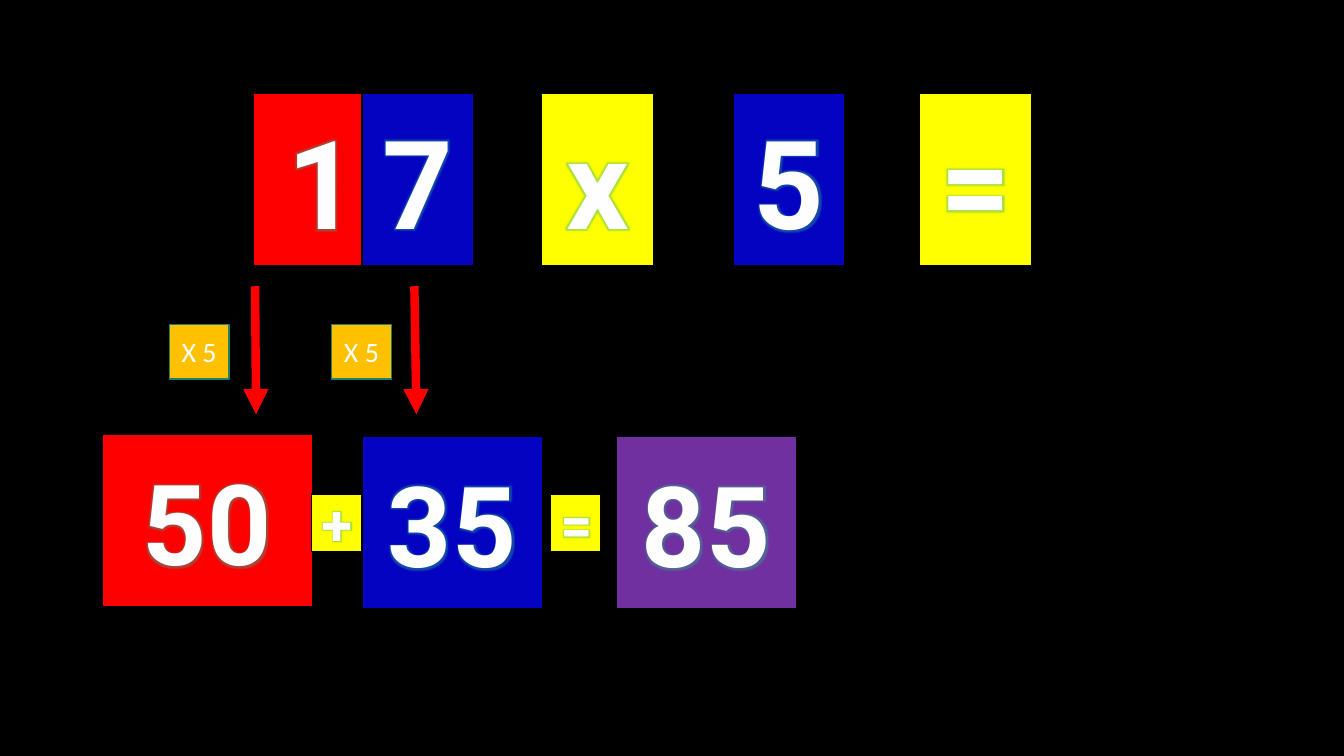
from lxml.etree import SubElement as Sub
from pptx import Presentation
from pptx.dml.color import RGBColor
from pptx.enum.shapes import MSO_CONNECTOR as Link, MSO_SHAPE as Shape
from pptx.enum.text import MSO_ANCHOR as Anchor, PP_ALIGN as Align
from pptx.oxml.ns import qn
from pptx.util import Inches, Pt

BLACK = RGBColor(0, 0, 0)
RED = RGBColor(255, 0, 0)
BLUE = RGBColor(3, 3, 193)
YELLOW = RGBColor(255, 255, 0)
PURPLE = RGBColor(112, 48, 160)
ORANGE = RGBColor(255, 192, 0)
TEAL = RGBColor(30, 129, 104)
GREEN = RGBColor(41, 175, 140)
PALE = RGBColor(254, 254, 254)
WHITE = RGBColor(255, 255, 255)

WIDE, HIGH = 13.33, 7.5
TALL, SLIM = 1.71, 1.11
TOP, LOW, MID = 0.93, 4.33, 4.9
SUM = [
    ("10", 2.51, 2.09, RED),
    ("7", 3.59, SLIM, BLUE),
    ("x", 5.37, SLIM, YELLOW),
    ("5", 7.27, SLIM, BLUE),
    ("=", 9.12, SLIM, YELLOW),
]
PARTS = [
    ("50", 1.01, LOW - 0.02, 2.09, RED),
    ("35", 3.59, LOW, 1.79, BLUE),
    ("85", 6.11, LOW, 1.79, PURPLE),
]
SIGNS = [("+", 3.09), ("=", 5.46)]
STEPS = [("X 5", 1.68, 2.53, 2.54), ("X 5", 3.29, 4.11, 4.13)]


def add_box(slide, text, place, fill, edge, size, font, ink):
    box = slide.shapes.add_shape(Shape.RECTANGLE, *map(Inches, place))
    box.shadow.inherit = False
    box.fill.solid()
    box.fill.fore_color.rgb = fill
    box.line.color.rgb = edge
    box.line.width = Pt(1)
    frame = box.text_frame
    frame.text = text
    frame.word_wrap = True
    frame.vertical_anchor = Anchor.MIDDLE
    para = frame.paragraphs[0]
    para.alignment = Align.CENTER
    run = para.runs[0]
    run.font.size = Pt(size)
    run.font.name = font
    run.font.color.rgb = ink
    return run


def add_card(slide, text, place, fill, size):
    run = add_box(slide, text, place, fill, BLACK, size, "Roboto", PALE)
    run.font.bold = True
    props = run.font._element
    props.set("spc", "50")
    line = Sub(props, qn("a:ln"), w=str(Pt(0.75)))
    solid = Sub(line, qn("a:solidFill"))
    Sub(solid, qn("a:srgbClr"), val=str(GREEN))
    glow = Sub(Sub(props, qn("a:effectLst")), qn("a:glow"), rad=str(Pt(3)))
    tint = Sub(glow, qn("a:srgbClr"), val=str(GREEN))
    Sub(tint, qn("a:alpha"), val="40000")
    props.insert(0, line)
    props.insert(2, props.find(qn("a:effectLst")))


def add_arrow(slide, start, end):
    ends = map(Inches, (start, 2.84, end, 4.11))
    arrow = slide.shapes.add_connector(Link.STRAIGHT, *ends)
    arrow.line.color.rgb = RED
    arrow.line.width = Pt(6)
    Sub(arrow.line._get_or_add_ln(), qn("a:tailEnd"), type="triangle")
    Sub(arrow._element.spPr, qn("a:effectLst"))


def main():
    deck = Presentation()
    deck.slide_width, deck.slide_height = Inches(WIDE), Inches(HIGH)
    slide = deck.slides.add_slide(deck.slide_layouts[6])
    back = slide.background.fill
    back.solid()
    back.fore_color.rgb = BLACK
    for text, left, width, fill in SUM:
        add_card(slide, text, (left, TOP, width, TALL), fill, 88)
    for text, left, start, end in STEPS:
        add_arrow(slide, start, end)
        place = (left, 3.22, 0.59, 0.54)
        add_box(slide, text, place, ORANGE, TEAL, 20, "Calibri", WHITE)
    for text, left, top, width, fill in PARTS:
        add_card(slide, text, (left, top, width, TALL), fill, 80)
    for text, left in SIGNS:
        add_card(slide, text, (left, MID, 0.5, 0.57), YELLOW, 40)
    deck.save("out.pptx")


if __name__ == "__main__":
    main()
